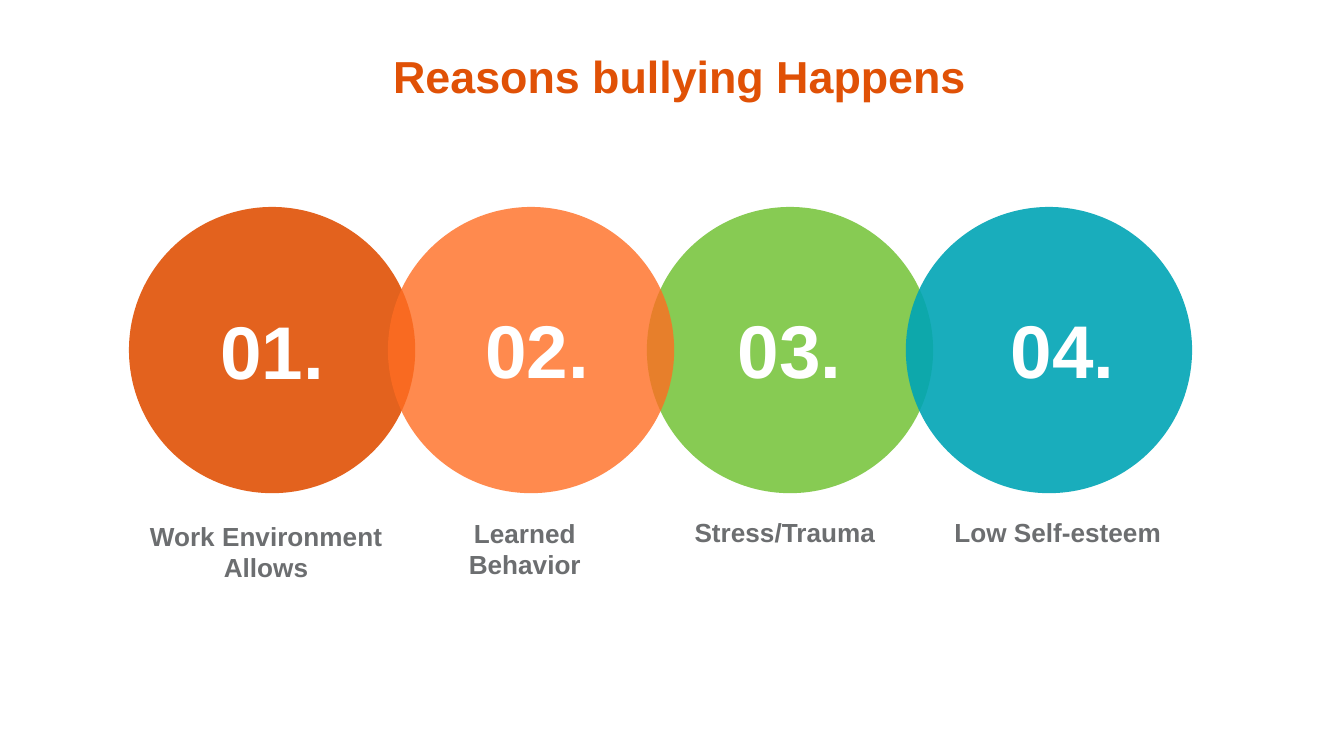
from lxml.etree import SubElement
from pptx import Presentation
from pptx.dml.color import RGBColor
from pptx.enum.shapes import MSO_SHAPE
from pptx.enum.text import MSO_ANCHOR, MSO_AUTO_SIZE, PP_ALIGN
from pptx.oxml.ns import qn
from pptx.util import Inches, Pt

COLORS = {
    "title": "E05106",
    "label": "6C6E70",
    "number": "FFFFFF",
    "circles": ["E05106", "FF6D22", "69BE28", "00A5B5"],
}


def write(tf, text, size, color):
    tf.word_wrap = True
    p = tf.paragraphs[0]
    p.text = text
    p.alignment = PP_ALIGN.CENTER
    p.font.name = "Arial"
    p.font.size = Pt(size)
    p.font.bold = True
    p.font.color.rgb = RGBColor.from_string(color)


def add_text(s, box, text, size, color):
    tf = s.shapes.add_textbox(*[Inches(v) for v in box]).text_frame
    write(tf, text, size, color)
    tf.auto_size = MSO_AUTO_SIZE.SHAPE_TO_FIT_TEXT
    return tf


prs = Presentation()
prs.slide_width = Inches(10)
prs.slide_height = Inches(10 * 9 / 16)
s = prs.slides.add_slide(prs.slide_layouts[5])

title = s.shapes.title
title.left, title.top = Inches(0.41), Inches(0.31)
title.width, title.height = Inches(9.29), Inches(0.4)
tf = title.text_frame
tf.auto_size = MSO_AUTO_SIZE.NONE
tf.vertical_anchor = MSO_ANCHOR.TOP
tf.margin_top, tf.margin_bottom = Inches(0.05), 0
write(tf, "Reasons bullying Happens", 24, COLORS["title"])

diameter = 2.13
first, last = 0.96, 6.74
step = (last - first) / 3
opacity = [90, 80, 80, 90]
for i in (2, 3, 0, 1):
    circle = s.shapes.add_shape(
        MSO_SHAPE.OVAL, Inches(first + i * step), Inches(1.54),
        Inches(diameter), Inches(diameter))
    circle.shadow.inherit = False
    circle.line.fill.background()
    circle.fill.solid()
    circle.fill.fore_color.rgb = RGBColor.from_string(COLORS["circles"][i])
    color = circle.fill._xPr.find(qn("a:solidFill"))[0]
    SubElement(color, qn("a:alpha"), val=str(opacity[i] * 1000))

labels = [
    ("Work Environment Allows", (0.93, 3.82, 2.1, 0.57)),
    ("Learned Behavior", (3.03, 3.8, 1.75, 0.57)),
    ("Stress/Trauma", (4.97, 3.79, 1.74, 0.34)),
    ("Low Self-esteem", (6.88, 3.79, 1.98, 0.34)),
]
for text, box in labels:
    add_text(s, box, text, 14, COLORS["label"])

numbers = [(1.51, 2.25), (3.48, 2.24), (5.36, 2.24), (7.39, 2.24)]
for n, (left, top) in enumerate(numbers, 1):
    tf = add_text(s, (left, top, 1.03, 0.71), f"{n:02d}.", 40, COLORS["number"])
    tf.margin_left = tf.margin_right = Inches(0.04)
    tf.margin_top = tf.margin_bottom = Inches(0.02)

prs.save("out.pptx")
